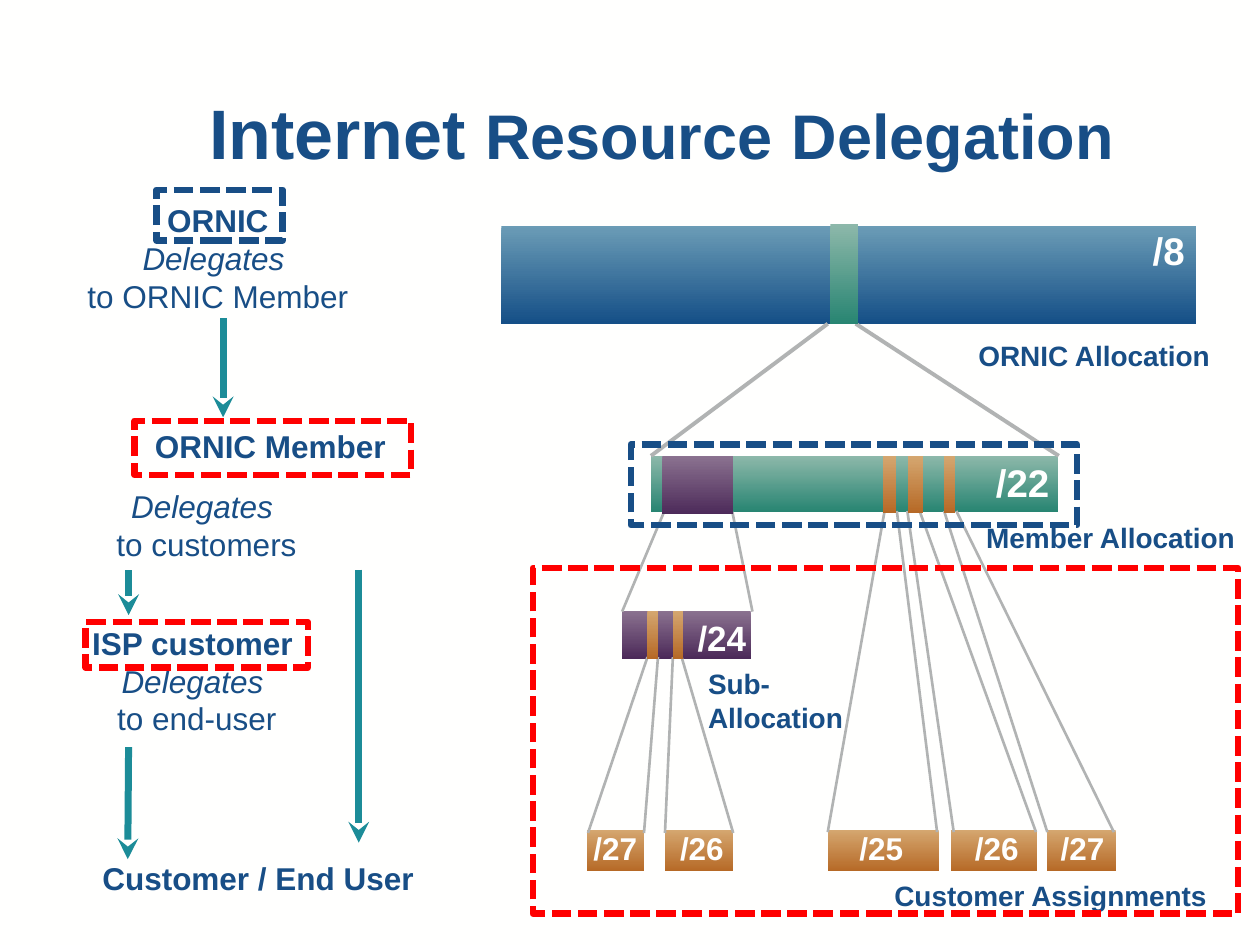
from typing import NamedTuple

from lxml import etree
from pptx import Presentation
from pptx.dml.color import RGBColor
from pptx.enum.dml import MSO_LINE
from pptx.enum.shapes import MSO_CONNECTOR, MSO_SHAPE
from pptx.enum.text import MSO_ANCHOR, PP_ALIGN
from pptx.oxml.ns import qn
from pptx.util import Pt

RECTANGLE, STRAIGHT = MSO_SHAPE.RECTANGLE, MSO_CONNECTOR.STRAIGHT
SHORT_DASH = MSO_LINE.SQUARE_DOT
LEFT, CENTER, RIGHT = PP_ALIGN.LEFT, PP_ALIGN.CENTER, PP_ALIGN.RIGHT
TOP, MIDDLE = MSO_ANCHOR.TOP, MSO_ANCHOR.MIDDLE

COLORS = {"paper": "FFFFFE", "navy": "184E86", "teal": "1C8C98",
          "grey": "B1B3B3", "red": "FF0000"}
GRADIENTS = {"registry": ("6B9CB6", "154F87"), "member": ("8DB8AA", "288572"),
             "sub": ("8B7290", "4C2A59"), "customer": ("D5A770", "B66926")}
BOLD, ITALIC, PLAIN = {"bold": True}, {"italic": True}, {}


class Box(NamedTuple):
    left: float
    top: float
    width: float
    height: float


class Block(NamedTuple):
    box: Box
    gradient: str


class Span(NamedTuple):
    left: float
    right: float
    y: float


class Zoom(NamedTuple):
    source: Span
    target: Span
    weight: float = 1.5


class Arrow(NamedTuple):
    x: float
    top: float
    end_x: float
    bottom: float


class Label(NamedTuple):
    box: Box
    lines: list  # (text, style) pairs
    size: float
    color: str = "navy"
    align: PP_ALIGN = LEFT
    anchor: MSO_ANCHOR = TOP
    spacing: float = 1.0


class Frame(NamedTuple):
    box: Box
    color: str


def rgb(name: str) -> RGBColor:
    return RGBColor.from_string(COLORS[name])


def points(values: tuple) -> list:
    return [Pt(value) for value in values]


def add_run(paragraph, text: str, size: float, color: str, style: dict) -> None:
    run = paragraph.add_run()
    run.text = text
    for attribute, value in {"name": "Arial", "size": Pt(size), **style}.items():
        setattr(run.font, attribute, value)
    run.font.color.rgb = rgb(color)


def draw_block(shapes, block: Block) -> None:
    rect = shapes.add_shape(RECTANGLE, *points(block.box))
    rect.shadow.inherit = False
    rect.line.fill.background()
    rect.fill.gradient()
    rect.fill.gradient_angle = 270
    for stop, tone in zip(rect.fill.gradient_stops, GRADIENTS[block.gradient]):
        stop.color.rgb = RGBColor.from_string(tone)


def draw_line(shapes, ends: tuple, color: str, weight: float, arrow: bool = False) -> None:
    line = shapes.add_connector(STRAIGHT, *points(ends))
    line.line.color.rgb = rgb(color)
    line.line.width = Pt(weight)
    if arrow:
        etree.SubElement(line.line._get_or_add_ln(), qn("a:tailEnd"), type="stealth")
    etree.SubElement(line._element.spPr, qn("a:effectLst"))


def draw_zoom(shapes, zoom: Zoom) -> None:
    source, target = zoom.source, zoom.target
    for start_x, end_x in zip(source[:2], target[:2]):
        draw_line(shapes, (start_x, source.y, end_x, target.y), "grey", zoom.weight)


def draw_label(shapes, label: Label) -> None:
    frame = shapes.add_textbox(*points(label.box)).text_frame
    frame.word_wrap = True
    frame.vertical_anchor = label.anchor
    paragraph = frame.paragraphs[0]
    for attribute, value in {"alignment": label.align, "line_spacing": label.spacing}.items():
        setattr(paragraph, attribute, value)
    for index, (text, style) in enumerate(label.lines):
        if index:
            paragraph.add_line_break()
        add_run(paragraph, text, label.size, label.color, style)


def draw_frame(shapes, frame: Frame) -> None:
    rect = shapes.add_shape(RECTANGLE, *points(frame.box))
    rect.shadow.inherit = False
    rect.fill.background()
    rect.line.color.rgb = rgb(frame.color)
    rect.line.width = Pt(3.75)
    rect.line.dash_style = SHORT_DASH


def step(box: Box, *lines: tuple) -> Label:
    return Label(box, list(lines), 18, align=CENTER)


def caption(box: Box, *texts: str) -> Label:
    return Label(box, [(text, BOLD) for text in texts], 16)


def prefix(box: Box, text: str, size: float, align: PP_ALIGN = LEFT) -> Label:
    return Label(box, [(text, BOLD)], size, "paper", align)


# Delegation steps on the left
STEPS = [
    step(Box(25, 111.5, 199, 73), ("ORNIC", BOLD), ("Delegates ", ITALIC),
         ("to ORNIC Member", PLAIN)),
    step(Box(73, 240.5, 163, 29), ("ORNIC Member", BOLD)),
    step(Box(-4.5, 275, 240, 50), ("Delegates", ITALIC), (" to customers", PLAIN)),
    step(Box(13, 353, 199, 72), ("ISP customer ", BOLD), ("Delegates ", ITALIC),
         ("to end-user", PLAIN)),
    step(Box(13, 487.5, 269, 36), ("Customer / End User", BOLD)),
]
ARROWS = [Arrow(127.5, 182, 127.5, 238.5), Arrow(205, 325.5, 205, 481.5),
          Arrow(73.5, 326, 73.5, 351.5), Arrow(73.5, 427, 73, 491)]

# Address blocks, and the slices cut out of them
ROW_TOP, ROW_HEIGHT = 474, 24
MEMBER_TOP, SUB_TOP = 260.5, 349
ASSIGNMENTS = [  # left, width, text left, text
    (335.5, 32.5, 332, "/27"), (380, 39, 381.5, "/26"), (473, 63.5, 484, "/25"),
    (543.5, 49, 550, "/26"), (598.5, 39, 599, "/27")]
BLOCKS = [Block(Box(286.5, 129, 397, 56), "registry"),
          Block(Box(372, MEMBER_TOP, 232.5, 32), "member"),
          Block(Box(355.5, SUB_TOP, 73.5, 27.5), "sub")]
BLOCKS += [Block(Box(left, ROW_TOP, width, ROW_HEIGHT), "customer")
           for left, width, *_ in ASSIGNMENTS]
SLICES = [Block(Box(474.5, 128, 16, 57), "member"),
          Block(Box(378.5, MEMBER_TOP, 40.5, 33.5), "sub")]
SLICES += [Block(Box(left, SUB_TOP, 6, 27.5), "customer") for left in (370, 384.5)]
SLICES += [Block(Box(left, MEMBER_TOP, width, 32.5), "customer")
           for left, width in ((504.5, 7.5), (519, 8.5), (539.5, 6.5))]

ZOOMS = [
    Zoom(Span(473, 489, 185), Span(372, 605, 260.5), 2.25),
    Zoom(Span(379.5, 418.5, 292.5), Span(355.5, 430, 349.5)),
    Zoom(Span(370, 376, 375.5), Span(336, 368, 476)),
    Zoom(Span(384.5, 389.5, 375.5), Span(380, 419, 476)),
    Zoom(Span(505.5, 512.5, 292), Span(473, 535.5, 475.5)),
    Zoom(Span(518.5, 525.5, 292), Span(545, 592, 475.5)),
    Zoom(Span(539.5, 546.5, 292), Span(598.5, 636.5, 475.5)),
]

# Prefix lengths and captions
LABELS = [
    prefix(Box(636, 126, 48, 34), "/8", 22, RIGHT),
    prefix(Box(562, 259, 48, 34), "/22", 22),
    prefix(Box(391.5, 349, 49, 31), "/24", 20),
    caption(Box(552, 190, 156, 27), "ORNIC Allocation"),
    caption(Box(556.5, 294, 164, 27), "Member Allocation"),
    caption(Box(397.5, 377.5, 142.5, 46), "Sub-", "Allocation"),
    caption(Box(504, 498.5, 201.5, 27), "Customer Assignments"),
]
LABELS += [prefix(Box(left, ROW_TOP, 46, 25), text, 18)._replace(anchor=MIDDLE, spacing=0.8)
           for *_, left, text in ASSIGNMENTS]

FRAMES = [
    Frame(Box(304.5, 324.5, 403, 197.5), "red"), Frame(Box(77, 240.5, 158, 31), "red"),
    Frame(Box(49, 355.5, 127, 26), "red"), Frame(Box(89.5, 108.5, 72, 29), "navy"),
    Frame(Box(360.5, 254, 255, 46), "navy"),
]


def main() -> None:
    deck = Presentation()
    deck.slide_width, deck.slide_height = Pt(720), Pt(540)
    slide = deck.slides.add_slide(deck.slide_layouts[5])
    slide.background.fill.solid()
    slide.background.fill.fore_color.rgb = rgb("paper")
    shapes = slide.shapes

    # Title
    title = shapes.title
    title.left, title.top, title.width, title.height = points((60, 30, 636, 90))
    title.text_frame.vertical_anchor = MIDDLE
    heading = title.text_frame.paragraphs[0]
    heading.alignment = CENTER
    for text, size in (("Internet ", 40), ("Resource", 36), (" ", 40), ("Delegation", 36)):
        add_run(heading, text, size, "navy", BOLD)

    # Diagram, from back to front
    for arrow in ARROWS:
        draw_line(shapes, arrow, "teal", 4, arrow=True)
    for draw, parts in ((draw_block, BLOCKS), (draw_zoom, ZOOMS), (draw_block, SLICES),
                        (draw_label, STEPS + LABELS), (draw_frame, FRAMES)):
        for part in parts:
            draw(shapes, part)
    deck.save("out.pptx")


if __name__ == "__main__":
    main()
